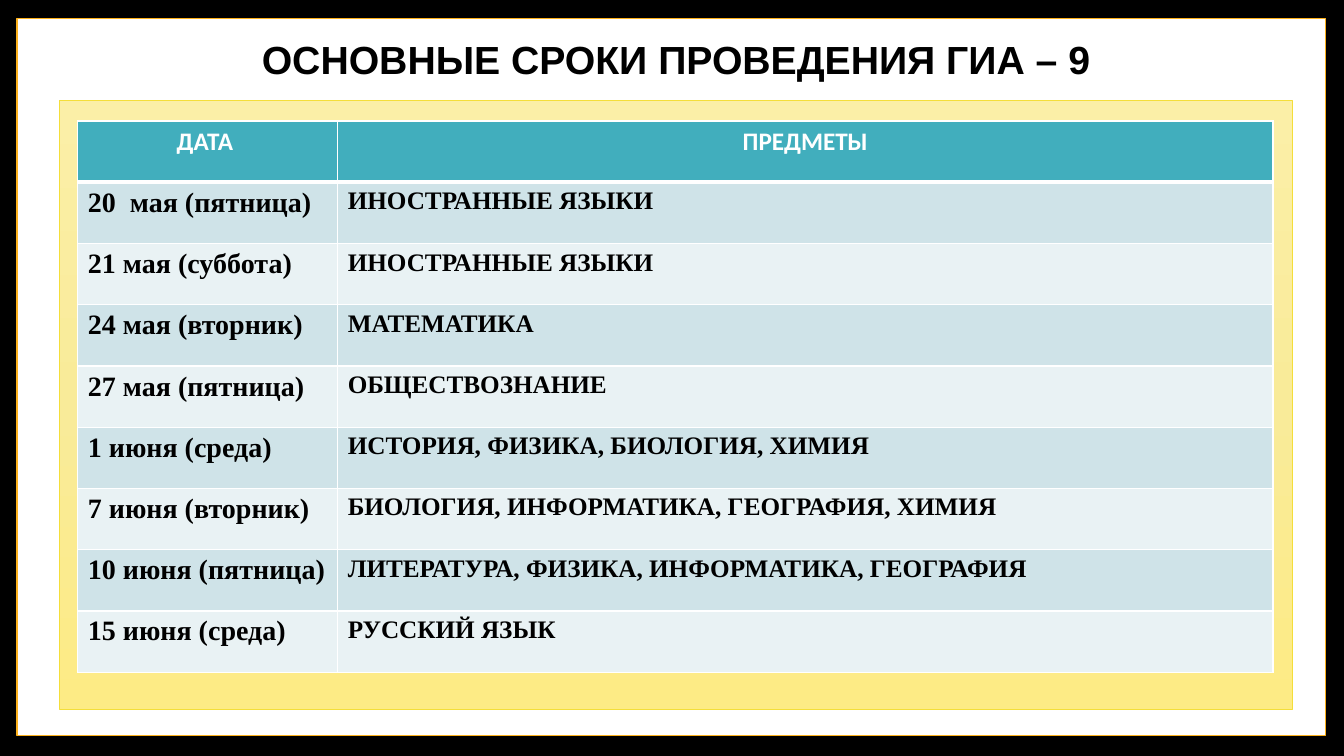
from copy import deepcopy

from lxml.etree import SubElement
from pptx import Presentation
from pptx.dml.color import RGBColor
from pptx.enum.shapes import MSO_SHAPE
from pptx.enum.text import MSO_ANCHOR, MSO_AUTO_SIZE, PP_ALIGN
from pptx.oxml.ns import qn
from pptx.util import Cm, Pt

HEADING = "ОСНОВНЫЕ СРОКИ ПРОВЕДЕНИЯ ГИА – 9"
COLUMNS = ("ДАТА ", "ПРЕДМЕТЫ")
EXAMS = [
    ("20  мая (пятница)", "ИНОСТРАННЫЕ ЯЗЫКИ"),
    ("21 мая (суббота)", "ИНОСТРАННЫЕ ЯЗЫКИ"),
    ("24 мая (вторник)", "МАТЕМАТИКА"),
    ("27 мая (пятница)", "ОБЩЕСТВОЗНАНИЕ"),
    ("1 июня (среда)", "ИСТОРИЯ, ФИЗИКА, БИОЛОГИЯ, ХИМИЯ"),
    ("7 июня (вторник)", "БИОЛОГИЯ, ИНФОРМАТИКА, ГЕОГРАФИЯ, ХИМИЯ"),
    ("10 июня (пятница)", "ЛИТЕРАТУРА, ФИЗИКА, ИНФОРМАТИКА, ГЕОГРАФИЯ"),
    ("15 июня (среда)", "РУССКИЙ ЯЗЫК"),
]

BLACK = RGBColor(0x00, 0x00, 0x00)
WHITE = RGBColor(0xFF, 0xFF, 0xFF)
ORANGE = RGBColor(0xFC, 0xB1, 0x1C)
YELLOW = RGBColor(0xF4, 0xDE, 0x3A)
PANEL_TOP = RGBColor(0xFB, 0xEF, 0xA7)
PANEL_MIDDLE = RGBColor(0xF9, 0xEB, 0x99)
PANEL_BOTTOM = RGBColor(0xFD, 0xEB, 0x85)
TEAL = RGBColor(0x41, 0xAE, 0xBD)
BANDS = (RGBColor(0xCF, 0xE3, 0xE8), RGBColor(0xE9, 0xF2, 0xF4))

COLUMN_WIDTHS = (Cm(6.55), Cm(23.57))
TABLE_HEIGHT = Cm(13.89)


def write(text_frame, text, font="Times New Roman", size=18, color=BLACK, align=PP_ALIGN.LEFT):
    paragraph = text_frame.paragraphs[0]
    paragraph.alignment = align
    run = paragraph.add_run()
    run.text = text
    run.font.name = font
    run.font.size = Pt(size)
    run.font.bold = True
    run.font.color.rgb = color


def add_rectangle(shapes, left, top, width, height, outline, weight):
    rectangle = shapes.add_shape(MSO_SHAPE.RECTANGLE, left, top, width, height)
    rectangle.shadow.inherit = False
    rectangle.line.color.rgb = outline
    rectangle.line.width = Pt(weight)
    return rectangle


def fill_panel(panel):
    panel.fill.gradient()
    panel.fill.gradient_angle = 270
    stops = panel._element.spPr.find(".//" + qn("a:gsLst"))
    stops.insert(1, deepcopy(stops[0]))
    colors = (PANEL_TOP, PANEL_MIDDLE, PANEL_BOTTOM)
    for stop, position, color in zip(panel.fill.gradient_stops, (0, 0.5, 1), colors):
        stop.position = position
        stop.color.rgb = color


def set_borders(cell, bottom, top):
    properties = cell._tc.get_or_add_tcPr()
    weights = {"lnL": 1, "lnR": 1, "lnT": top, "lnB": bottom}
    for index, (side, weight) in enumerate(weights.items()):
        border = SubElement(properties, qn("a:" + side), w=str(Pt(weight)))
        SubElement(SubElement(border, qn("a:solidFill")), qn("a:srgbClr"), val=str(WHITE))
        properties.insert(index, border)


def add_schedule(shapes):
    rows = [COLUMNS] + EXAMS
    schedule = shapes.add_table(
        len(rows), len(COLUMNS), Cm(1.96), Cm(3.05), sum(COLUMN_WIDTHS), TABLE_HEIGHT
    ).table
    for column, width in zip(schedule.columns, COLUMN_WIDTHS):
        column.width = width
    for row_index, entries in enumerate(rows):
        schedule.rows[row_index].height = TABLE_HEIGHT // len(rows)
        for column_index, entry in enumerate(entries):
            cell = schedule.cell(row_index, column_index)
            cell.fill.solid()
            if row_index == 0:
                cell.fill.fore_color.rgb = TEAL
                write(cell.text_frame, entry, font="Calibri", color=WHITE, align=PP_ALIGN.CENTER)
            else:
                cell.fill.fore_color.rgb = BANDS[(row_index - 1) % 2]
                write(cell.text_frame, entry, size=(20, 18)[column_index])
            set_borders(cell, bottom=3 if row_index == 0 else 1, top=3 if row_index == 1 else 1)


def main():
    presentation = Presentation()
    presentation.slide_width, presentation.slide_height = Cm(33.87), Cm(19.05)
    slide = presentation.slides.add_slide(presentation.slide_layouts[5])
    slide.background.fill.solid()
    slide.background.fill.fore_color.rgb = BLACK

    frame = add_rectangle(slide.shapes, Cm(0.43), Cm(0.46), Cm(32.97), Cm(18.08), ORANGE, 1)
    frame.fill.solid()
    frame.fill.fore_color.rgb = WHITE

    title = slide.shapes.title
    frame._element.addnext(title._element)
    title.left, title.top, title.width, title.height = Cm(1.12), Cm(0.76), Cm(31.83), Cm(1.45)
    title.text_frame.auto_size = MSO_AUTO_SIZE.NONE
    title.text_frame.vertical_anchor = MSO_ANCHOR.MIDDLE
    write(title.text_frame, HEADING, font="Arial", size=28, align=PP_ALIGN.CENTER)

    panel = add_rectangle(slide.shapes, Cm(1.5), Cm(2.54), Cm(31.06), Cm(15.34), YELLOW, 0.5)
    fill_panel(panel)
    add_schedule(slide.shapes)
    presentation.save("out.pptx")


if __name__ == "__main__":
    main()
